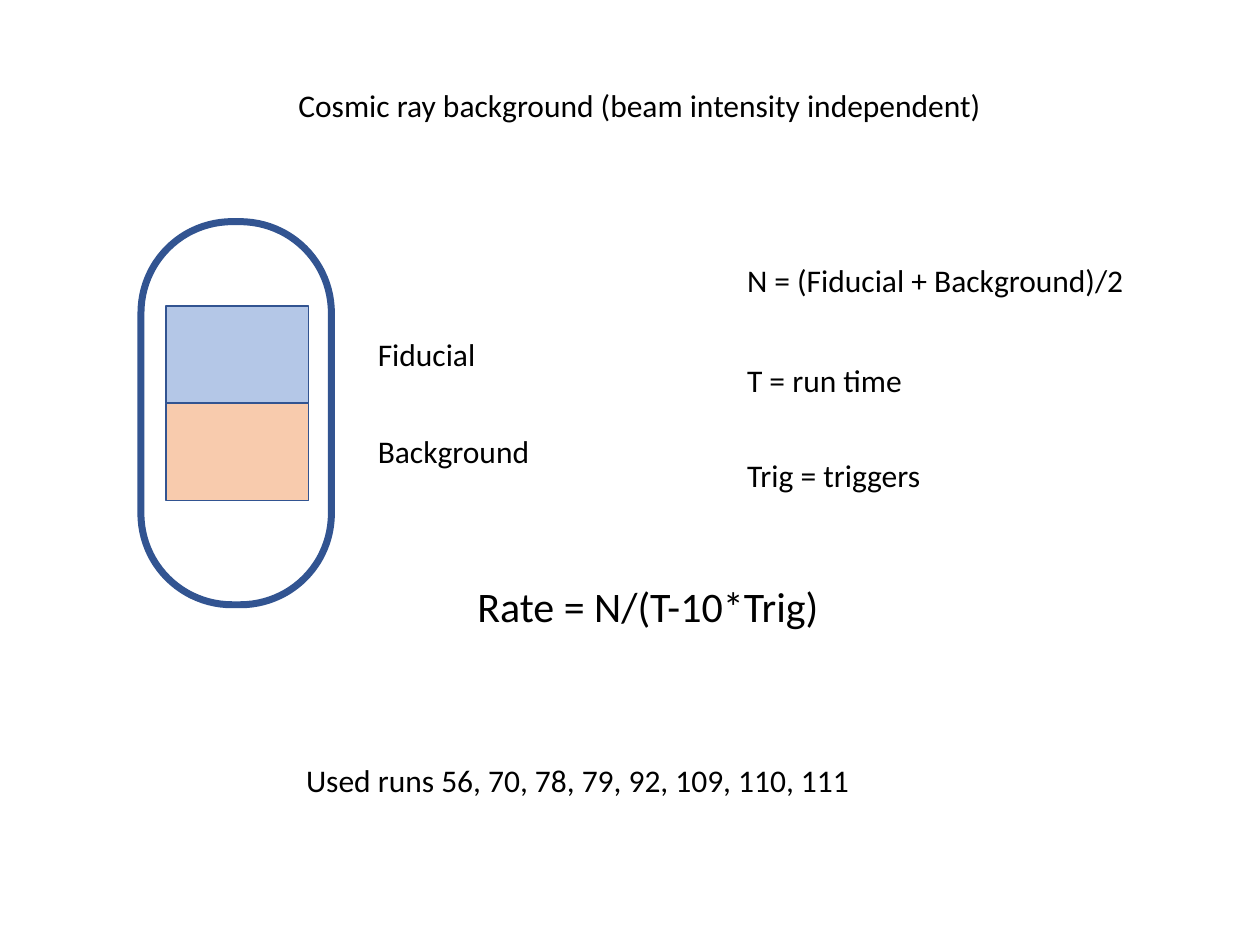
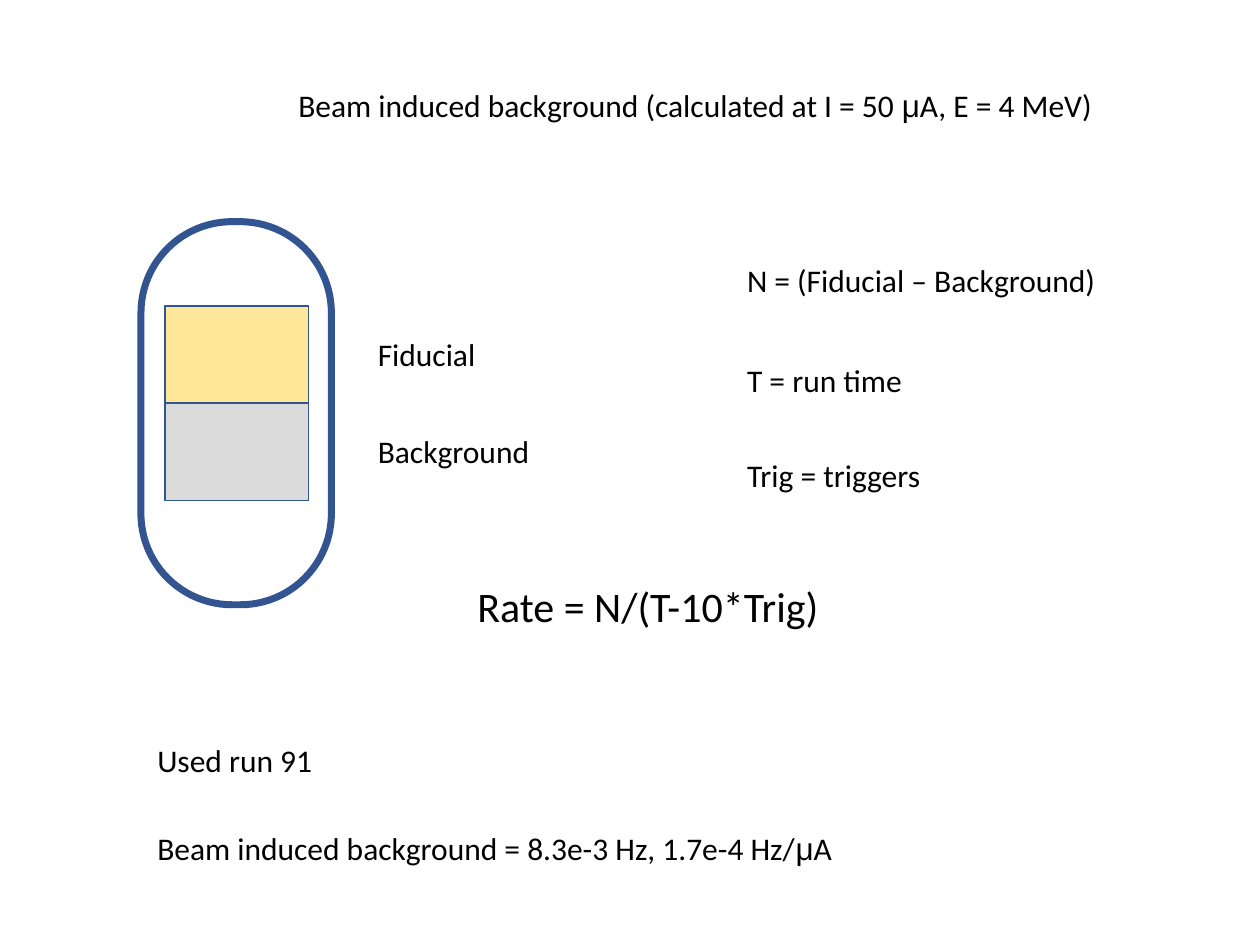
from pptx import Presentation
from pptx.dml.color import RGBColor
from pptx.enum import shapes, text
from pptx.util import Pt

BLACK = RGBColor(0x00, 0x00, 0x00)
OUTLINE = RGBColor(0x32, 0x54, 0x91)
BLUE = RGBColor(0xB4, 0xC7, 0xE7)
ORANGE = RGBColor(0xF8, 0xCB, 0xAD)
YELLOW = RGBColor(0xFF, 0xE6, 0x99)
GRAY = RGBColor(0xDB, 0xDB, 0xDB)

BODY_FONT, MU_FONT = "Calibri", "Arial"
FRAME = {"word_wrap": False, "auto_size": text.MSO_AUTO_SIZE.SHAPE_TO_FIT_TEXT}

SLIDES = [
    {
        "title": ("Cosmic ray background (beam intensity independent)", 409.7),
        "windows": (BLUE, ORANGE),
        "inset": 14.4,
        "count": ("N = (Fiducial + Background)/2", 232.6),
        "notes_box": (167.8, 431.3),
        "notes": [("Used runs 56, 70, 78, 79, 92, 109, 110, 111", 329)],
    },
    {
        "title": ("Beam induced background (calculated at I = 50 μA, E = 4 MeV)", 473.8),
        "windows": (YELLOW, GRAY),
        "inset": 13.7,
        "count": ("N = (Fiducial – Background)", 216),
        "notes_box": (82.8, 419.8),
        "notes": [
            ("Used run 91", 104.4),
            ("Beam induced background = 8.3e-3 Hz, 1.7e-4 Hz/μA", 407.5),
        ],
    },
]


def set_attrs(obj, values):
    for name, value in values.items():
        setattr(obj, name, value)


def add_text(s, x, y, content, width, size=18):
    tf = s.shapes.add_textbox(Pt(x), Pt(y), Pt(width), Pt(size * 1.2 + 7.2)).text_frame
    set_attrs(tf, FRAME)
    p = tf.paragraphs[0]
    for part in filter(None, content.partition("μ")):
        r = p.add_run()
        r.text = part
        font = MU_FONT if part == "μ" else BODY_FONT
        set_attrs(r.font, {"name": font, "size": Pt(size)})
        r.font.color.rgb = BLACK


def add_outlined(s, kind, x, y, w, h, weight, fill=None):
    sp = s.shapes.add_shape(kind, Pt(x), Pt(y), Pt(w), Pt(h))
    sp.shadow.inherit = False
    sp.line.color.rgb = OUTLINE
    sp.line.width = Pt(weight)
    if fill is None:
        sp.fill.background()
    else:
        sp.fill.solid()
        sp.fill.fore_color.rgb = fill
    return sp


def add_vessel(s, x, y, w, h, inset, colors):
    vessel = add_outlined(s, shapes.MSO_SHAPE.ROUNDED_RECTANGLE, x, y, w, h, 4)
    vessel.adjustments[0] = 0.478
    window_h = 55.6
    labels = [("Fiducial", 71.3), ("Background", 102.2)]
    for i, (color, label) in enumerate(zip(colors, labels)):
        top = y + 48.2 + i * window_h
        add_outlined(s, shapes.MSO_SHAPE.RECTANGLE, x + inset, top,
                     w - inset - 13, window_h, 1, color)
        add_text(s, x + w + 19.4, top + 13, *label)


def add_definitions(s, x, y, count):
    rows = [(0, count), (57.2, ("T = run time", 104.4)), (111.4, ("Trig = triggers", 114.5))]
    for offset, row in rows:
        add_text(s, x, y + offset, *row)


def add_notes(s, x, y, notes):
    for i, note in enumerate(notes):
        add_text(s, x, y + i * 50.4, *note)


def add_background_slide(prs, content):
    s = prs.slides.add_slide(prs.slide_layouts[6])
    add_text(s, 163.4, 45.4, *content["title"])
    add_vessel(s, 80.6, 126.7, 108.8, 218.9, content["inset"], content["windows"])
    add_definitions(s, 419.8, 145.6, content["count"])
    add_text(s, 265.7, 327.9, "Rate = N/(T-10*Trig)", 211.7, 24)
    add_notes(s, *content["notes_box"], content["notes"])


def main():
    prs = Presentation()
    set_attrs(prs, {"slide_width": Pt(720), "slide_height": Pt(540)})
    for content in SLIDES:
        add_background_slide(prs, content)
    prs.save("out.pptx")


if __name__ == "__main__":
    main()
